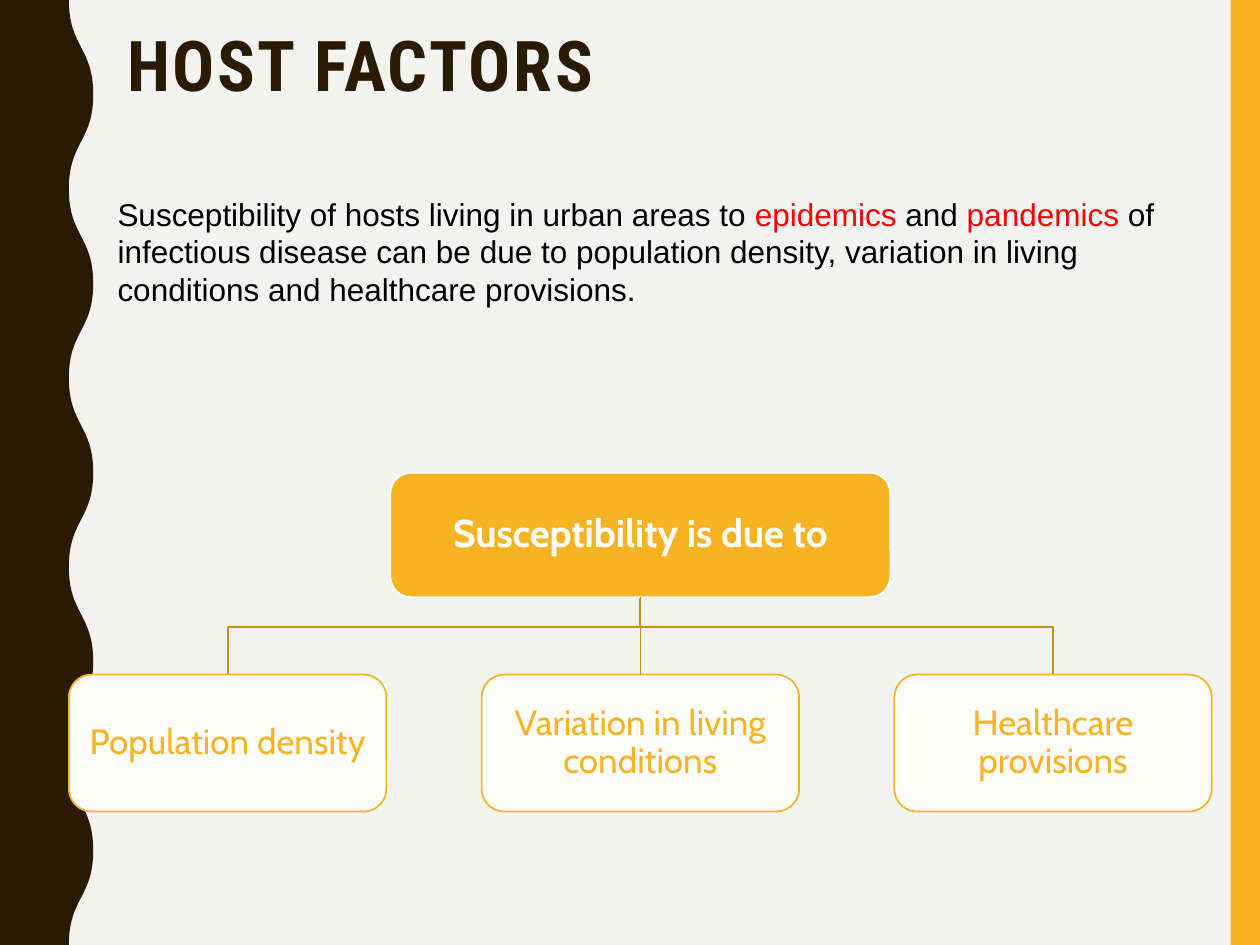
from lxml.etree import SubElement
from pptx import Presentation
from pptx.dml.color import RGBColor
from pptx.enum.shapes import MSO_CONNECTOR, MSO_SHAPE
from pptx.enum.text import MSO_ANCHOR, MSO_AUTO_SIZE, PP_ALIGN
from pptx.oxml.ns import qn
from pptx.util import Cm, Pt

COLORS = {
    "back": "F3F3F2", "gold": "F8B323", "brown": "2A1A00", "line": "C78F1C",
    "pale": "FDFDFC", "white": "FFFFFF", "black": "000000", "red": "FF0000",
}
WIDTH, HEIGHT = 25.4, 19.05
MID = 12.91  # centre of the tree
ROOT_TOP, ROOT_W, ROOT_H = 9.53, 10.08, 2.51
LEAF_TOP, LEAF_W, LEAF_H, PITCH = 13.6, 6.4, 2.76, 8.32
BEND = 12.64
LEAVES = ["Population density", "Variation in living conditions",
          "Healthcare provisions"]
BODY = [
    ("Susceptibility of hosts living in urban areas to ", "black"),
    ("epidemics", "red"),
    (" and ", "black"),
    ("pandemics", "red"),
    (" of infectious disease can be due to population density, variation in "
     "living conditions and healthcare provisions.", "black"),
]


def color(name):
    return RGBColor.from_string(COLORS[name])


def paint(shape, fill=None, line=None):
    shape.shadow.inherit = False
    if fill:
        shape.fill.solid()
        shape.fill.fore_color.rgb = color(fill)
    else:
        shape.fill.background()
    if line:
        shape.line.color.rgb = color(line)
        shape.line.width = Pt(1)
    else:
        shape.line.fill.background()


def set_font(font, name, size, tint=None, bold=False):
    font.name, font.size, font.bold = name, Pt(size), bold
    if tint:
        font.color.rgb = color(tint)


def add_path(slide, points, fill=None, line=None, close=False):
    pen = slide.shapes.build_freeform(*map(Cm, points[0]))
    pen.add_line_segments([(Cm(x), Cm(y)) for x, y in points[1:]], close=close)
    shape = pen.convert_to_shape()
    paint(shape, fill, line)
    return shape


def bend(shape, count):
    """Turn the first count triples of line segments into cubic curves."""
    lines = list(shape._element.iter(qn("a:lnTo")))
    for i in range(0, 3 * count, 3):
        curve = lines[i].makeelement(qn("a:cubicBezTo"))
        lines[i].addprevious(curve)
        for line in lines[i:i + 3]:
            curve.append(line[0])
            line.getparent().remove(line)


def add_wave(slide, low=1.39, high=1.88, waves=10):
    rise = HEIGHT / waves
    points = [(low, 0)]
    for i in range(waves):
        start, end = (low, high) if i % 2 == 0 else (high, low)
        half = rise * (i + 0.5)
        points += [(start, half), (end, half), (end, rise * (i + 1))]
    points += [(0, HEIGHT), (0, 0)]
    bend(add_path(slide, points, fill="brown", close=True), waves)


def add_bar(slide):
    bar = slide.shapes.add_shape(MSO_SHAPE.RECTANGLE, Cm(24.81), 0,
                                 Cm(WIDTH - 24.81), Cm(HEIGHT))
    paint(bar, "gold")


def set_title(slide, text):
    title = slide.shapes.title
    title.left, title.top = Cm(2.31), Cm(0.5)
    title.width, title.height = Cm(21.21), Cm(4.14)
    frame = title.text_frame
    frame.text = text
    frame.auto_size = MSO_AUTO_SIZE.NONE
    frame.vertical_anchor = MSO_ANCHOR.TOP
    par = frame.paragraphs[0]
    par.alignment, par.line_spacing = PP_ALIGN.LEFT, 0.9
    set_font(par.font, "Roboto Condensed", 40, "brown", True)
    par.runs[0].font._element.set("spc", "150")


def add_body(slide, parts):
    box = slide.shapes.add_textbox(Cm(2.12), Cm(3.8), Cm(21.59), Cm(2.57))
    box.text_frame.word_wrap = True
    par = box.text_frame.paragraphs[0]
    set_font(par.font, "Arial", 18)
    for text, tint in parts:
        run = par.add_run()
        run.text = text
        run.font.color.rgb = color(tint)


def add_box(slide, text, mid, top, width, height, fill, line, tint, size,
            bold=False):
    box = slide.shapes.add_shape(MSO_SHAPE.ROUNDED_RECTANGLE,
                                 Cm(mid - width / 2), Cm(top),
                                 Cm(width), Cm(height))
    paint(box, fill, line)
    frame = box.text_frame
    frame.text = text
    frame.word_wrap = True
    frame.vertical_anchor = MSO_ANCHOR.MIDDLE
    frame.margin_left = frame.margin_right = Cm(0.15)
    frame.margin_top = frame.margin_bottom = Cm(0.15)
    par = frame.paragraphs[0]
    par.alignment, par.line_spacing = PP_ALIGN.CENTER, 0.9
    set_font(par.font, "Cabin", size, tint, bold)
    return box


def join(slide, root, leaf):
    link = slide.shapes.add_connector(MSO_CONNECTOR.STRAIGHT, 0, 0, 0, 0)
    link.begin_connect(root, 2)
    link.end_connect(leaf, 0)
    link.line.color.rgb = color("line")
    link.line.width = Pt(1)
    SubElement(link._element.spPr, qn("a:effectLst"))


def add_tree(slide):
    mids = [MID + PITCH * i for i in (-1, 0, 1)]
    foot = ROOT_TOP + ROOT_H
    for mid in (mids[0], mids[2]):
        add_path(slide, [(MID, foot), (MID, BEND), (mid, BEND),
                         (mid, LEAF_TOP)], line="line")
    root = add_box(slide, "Susceptibility is due to", MID, ROOT_TOP, ROOT_W,
                   ROOT_H, "gold", "white", "white", 22, True)
    boxes = [add_box(slide, text, mid, LEAF_TOP, LEAF_W, LEAF_H,
                     "pale", "gold", "gold", 20)
             for text, mid in zip(LEAVES, mids)]
    join(slide, root, boxes[1])


def main():
    deck = Presentation()
    deck.slide_width, deck.slide_height = Cm(WIDTH), Cm(HEIGHT)
    slide = deck.slides.add_slide(deck.slide_layouts[5])
    slide.background.fill.solid()
    slide.background.fill.fore_color.rgb = color("back")
    add_bar(slide)
    add_wave(slide)
    set_title(slide, "HOST FACTORS")
    add_body(slide, BODY)
    add_tree(slide)
    deck.save("out.pptx")


if __name__ == "__main__":
    main()
